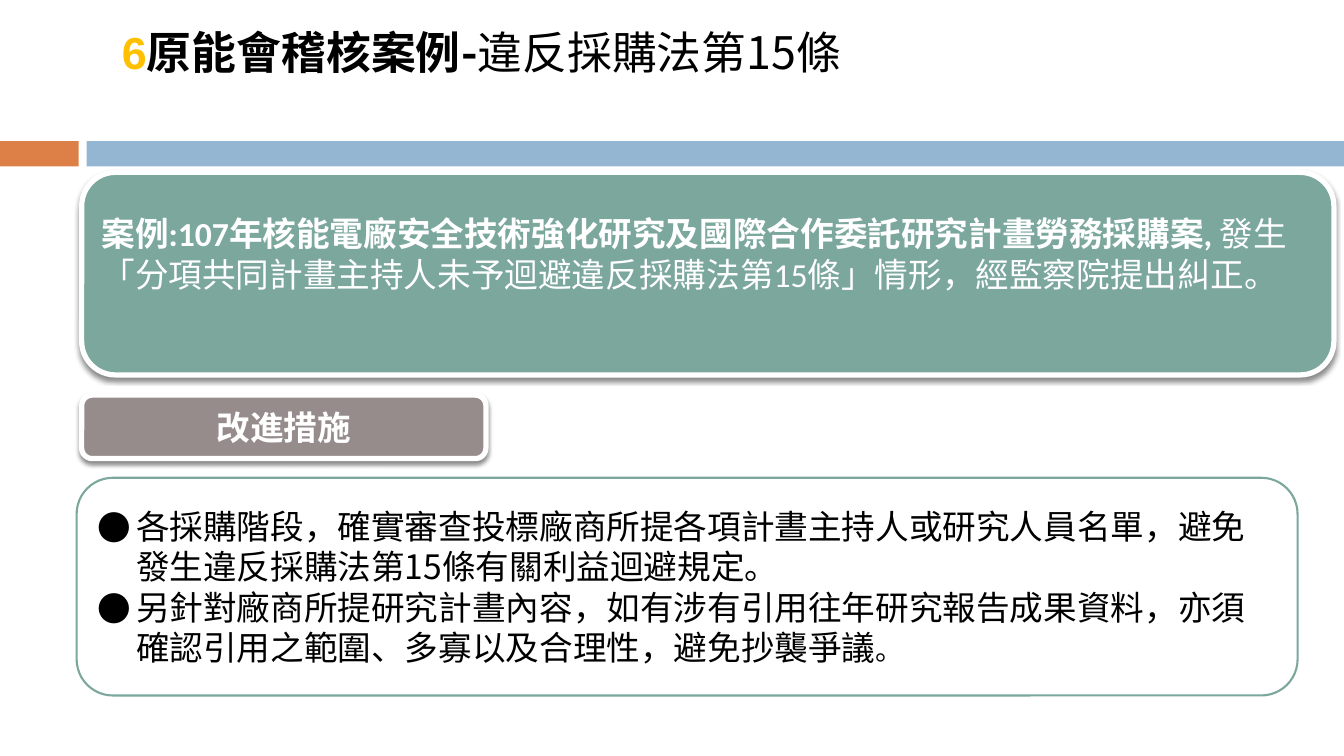
import pptx
import pptx.util
import pptx.dml.color
import pptx.enum.shapes
import pptx.enum.text
import pptx.oxml
import pptx.oxml.ns
from lxml import etree

Inches, Pt = pptx.util.Inches, pptx.util.Pt
SHAPE = pptx.enum.shapes.MSO_SHAPE
ANCHOR = pptx.enum.text.MSO_ANCHOR
ALIGN = pptx.enum.text.PP_ALIGN
NOTO, CALIBRI = "Noto Sans CJK SC", "Calibri"
WHITE, BLACK, GREEN, GREY = "FFFFFF", "000000", "7BA79D", "968C8C"

# Runs: text, font, size, colour, bold
TITLE = [
    ("6", "Arial", 32, "FFC000", True),
    ("原能會稽核案例-", NOTO, 32, BLACK, True),
    ("違反採購法第15條", NOTO, 32, BLACK, False),
]
CASE = [
    ("案例:107年核能電廠安全技術強化研究及國際合作委託研究計畫勞務採購案,",
     CALIBRI, 24, WHITE, True),
    (" 發生「分項共同計畫主持人未予迴避違反採購法第15條」情形，經監察院提出糾正。",
     CALIBRI, 24, WHITE, False),
]
LABEL = [("改進措施", CALIBRI, 24, WHITE, True)]
STEPS = [
    [("各採購階段，確實審查投標廠商所提各項計晝主持人或研究人員名單，"
      "避免發生違反採購法第15條有關利益迴避規定。", NOTO, 24, BLACK, False)],
    [("另針對廠商所提研究計晝內容，如有涉有引用往年研究報告成果資料，"
      "亦須確認引用之範圍、多寡以及合理性，避免抄襲爭議", NOTO, 24, BLACK, False),
     ("。", CALIBRI, 20, BLACK, False)],
]
BARS = [((0, 1.4, 0.78, 0.25), "DD8047"), ((0.86, 1.4, 12.47, 0.25), "94B6D2")]
# Cards: box, fill, line, line width, raised, runs, alignment, bottom inset
CARDS = [
    ((0.81, 1.71, 12.42, 2.01), GREEN, WHITE, 3.75, True, CASE, ALIGN.LEFT, 0.45),
    ((0.76, 4.74, 12.11, 2.16), WHITE, GREEN, 1.5, False, [], ALIGN.LEFT, 0.05),
    ((0.81, 3.92, 4.01, 0.63), GREY, WHITE, 3.75, True, LABEL, ALIGN.CENTER, 0.05),
]


def rgb(code):
    return pptx.dml.color.RGBColor.from_string(code)


def write(para, runs):
    for text, font, size, color, bold in runs:
        run = para.add_run()
        run.text = text
        run.font.name, run.font.size, run.font.bold = font, Pt(size), bold
        run.font.color.rgb = rgb(color)
        props = run.font._element
        east = etree.SubElement(props, pptx.oxml.ns.qn("a:ea"))
        east.set("typeface", font)


def place(shape, box):
    shape.left, shape.top, shape.width, shape.height = map(Inches, box)


def draw(kind, box, fill):
    shape = slide.shapes.add_shape(kind, *map(Inches, box))
    shape.shadow.inherit = False
    shape.fill.solid()
    shape.fill.fore_color.rgb = rgb(fill)
    shape.line.fill.background()
    return shape


def raise_up(shape):
    """Give the shape a soft shadow below it."""
    old = shape._element.spPr.find(pptx.oxml.ns.qn("a:effectLst"))
    old.append(pptx.oxml.parse_xml(
        f'<a:outerShdw {pptx.oxml.ns.nsdecls("a")} blurRad="{Pt(3)}" '
        f'dist="{Pt(2.4)}" dir="5400000" rotWithShape="0">'
        '<a:srgbClr val="000000"><a:alpha val="45000"/></a:srgbClr></a:outerShdw>'))


def bullet(para):
    props = para._p.get_or_add_pPr()
    props.set("marL", str(Inches(0.38)))
    props.set("indent", str(Inches(-0.38)))
    for tag, key, value in (("a:buFont", "typeface", NOTO), ("a:buChar", "char", "●")):
        etree.SubElement(props, pptx.oxml.ns.qn(tag)).set(key, value)


deck = pptx.Presentation()
deck.slide_width, deck.slide_height = Inches(13.33), Inches(7.5)
slide = deck.slides.add_slide(deck.slide_layouts[1])

for box, fill in BARS:
    draw(SHAPE.RECTANGLE, box, fill)

for box, fill, line, width, raised, runs, align, inset in CARDS:
    card = draw(SHAPE.ROUNDED_RECTANGLE, box, fill)
    card.line.color.rgb = rgb(line)
    card.line.width = Pt(width)
    if raised:
        raise_up(card)
    if runs:
        frame = card.text_frame
        frame.word_wrap = True
        frame.vertical_anchor = ANCHOR.MIDDLE
        frame.margin_bottom = Inches(inset)
        frame.paragraphs[0].alignment = align
        write(frame.paragraphs[0], runs)

title = slide.shapes.title
place(title, (1.11, 0.19, 11.09, 1.18))
title.text_frame.vertical_anchor = ANCHOR.TOP
title.text_frame.auto_size = pptx.enum.text.MSO_AUTO_SIZE.NONE
title.text_frame.paragraphs[0].alignment = ALIGN.LEFT
write(title.text_frame.paragraphs[0], TITLE)

body = slide.placeholders[1]
place(body, (0.87, 4.84, 11.89, 1.96))
frame = body.text_frame
frame.vertical_anchor = ANCHOR.MIDDLE
frame.auto_size = pptx.enum.text.MSO_AUTO_SIZE.NONE
for i, runs in enumerate(STEPS):
    para = frame.add_paragraph() if i else frame.paragraphs[0]
    para.space_before = Pt(0)
    bullet(para)
    write(para, runs)

# The list lies in front of its card
slide.shapes._spTree.append(body._element)
deck.save("out.pptx")
